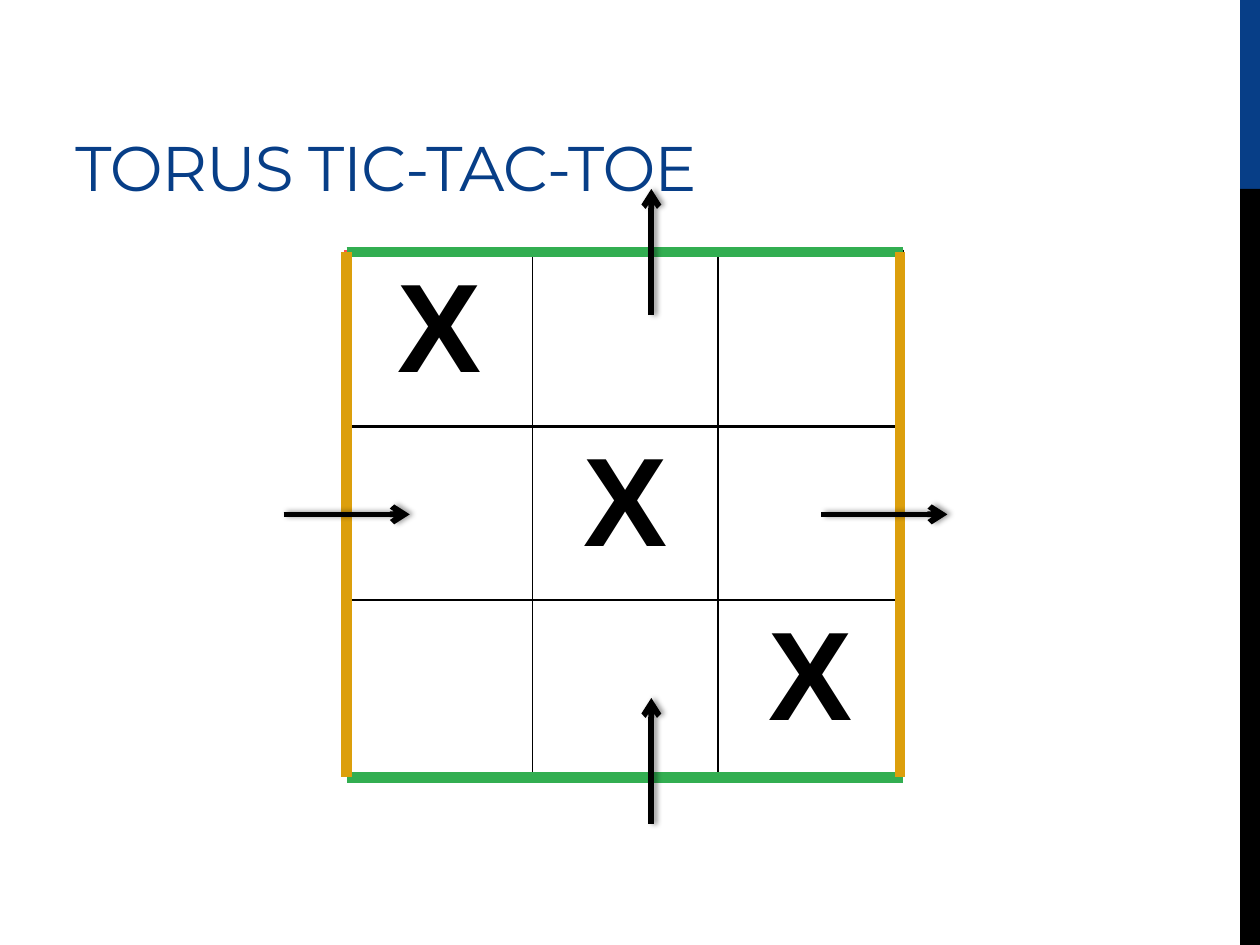
from dataclasses import dataclass

from lxml.etree import SubElement
from pptx import Presentation
from pptx.dml.color import RGBColor
from pptx.enum.shapes import MSO_CONNECTOR, MSO_SHAPE
from pptx.enum.text import MSO_ANCHOR, PP_ALIGN
from pptx.oxml.ns import qn
from pptx.util import Cm, Pt

BLUE, BLACK, WHITE = "073E87", "000000", "FFFFFF"
GREEN, GOLD, RED = "32AE51", "DC9F0C", "FF5050"
LEFT, TOP, RIGHT, BOTTOM = 6.99, 5.08, 18.21, 15.67
GOLD_RIGHT = 18.14
SIZE, COLUMN, ROW = 3, 3.74, 3.51
ARROW = 2.54


@dataclass(frozen=True)
class Band:
    top: float
    height: float
    color: str


@dataclass(frozen=True)
class Border:
    color: str
    width: float


@dataclass(frozen=True)
class Line:
    x1: float
    y1: float
    x2: float
    y2: float
    color: str = BLACK
    width: float = 3.25
    arrow: bool = False


BANDS = [Band(0, 3.81, BLUE), Band(3.81, 15.24, BLACK)]
COLUMN_EDGES = [Border(RED, 3), Border(BLACK, 1), Border(BLACK, 1), Border(BLACK, 1)]
ROW_EDGES = [Border(GREEN, 3), Border(BLACK, 2), Border(BLACK, 1), Border(GREEN, 3)]
EDGES = [Line(LEFT, y, RIGHT, y, GREEN, 6) for y in (TOP, BOTTOM)] + [
    Line(x, TOP, x, BOTTOM, GOLD, 6) for x in (LEFT, GOLD_RIGHT)
]
ARROWS = [Line(13.13, y, 13.13, y - ARROW, arrow=True) for y in (6.35, 16.61)] + [
    Line(x, 10.37, x + ARROW, 10.37, arrow=True) for x in (5.72, 16.56)
]


def rgb(color: str) -> RGBColor:
    return RGBColor.from_string(color)


def add_band(page, band: Band) -> None:
    shape = page.shapes.add_shape(
        MSO_SHAPE.RECTANGLE, Cm(25), Cm(band.top), Cm(0.4), Cm(band.height)
    )
    shape.shadow.inherit = False
    shape.fill.solid()
    shape.fill.fore_color.rgb = rgb(band.color)
    shape.line.fill.background()


def add_title(page, text: str) -> None:
    box = page.shapes.add_textbox(Cm(1.27), Cm(0.43), Cm(16.08), Cm(3.81))
    frame = box.text_frame
    frame.word_wrap = True
    frame.vertical_anchor = MSO_ANCHOR.BOTTOM
    para = frame.paragraphs[0]
    para.text = text
    para.font.name = "Montserrat"
    para.font.size = Pt(36)
    para.font.color.rgb = rgb(BLUE)
    para._p.pPr.find(qn("a:defRPr")).set("spc", "-60")


def set_border(cell, side: str, border: Border) -> None:
    properties = cell._tc.get_or_add_tcPr()
    line = SubElement(properties, qn(f"a:ln{side}"), w=str(Pt(border.width)))
    fill = SubElement(line, qn("a:solidFill"))
    SubElement(fill, qn("a:srgbClr"), val=border.color)


def add_board(page) -> None:
    frame = page.shapes.add_table(
        SIZE, SIZE, Cm(LEFT), Cm(TOP), Cm(SIZE * COLUMN), Cm(SIZE * ROW)
    )
    table = frame.table
    table.first_row = False
    table.horz_banding = False
    for column in table.columns:
        column.width = Cm(COLUMN)
    for r, row in enumerate(table.rows):
        row.height = Cm(ROW)
        for c, cell in enumerate(row.cells):
            set_border(cell, "L", COLUMN_EDGES[c])
            set_border(cell, "R", COLUMN_EDGES[c + 1])
            set_border(cell, "T", ROW_EDGES[r])
            set_border(cell, "B", ROW_EDGES[r + 1])
            cell.fill.solid()
            cell.fill.fore_color.rgb = rgb(WHITE)
            if r == c:
                mark_cell(cell)


def mark_cell(cell) -> None:
    para = cell.text_frame.paragraphs[0]
    para.text = "X"
    para.alignment = PP_ALIGN.CENTER
    para.font.name = "Arial"
    para.font.size = Pt(72)
    para.font.bold = True
    para.font.color.rgb = rgb(BLACK)


def add_line(page, line: Line) -> None:
    connector = page.shapes.add_connector(
        MSO_CONNECTOR.STRAIGHT, Cm(line.x1), Cm(line.y1), Cm(line.x2), Cm(line.y2)
    )
    connector.line.color.rgb = rgb(line.color)
    connector.line.width = Pt(line.width)
    properties = connector._element.spPr
    effects = SubElement(properties, qn("a:effectLst"))
    if line.arrow:
        SubElement(properties.find(qn("a:ln")), qn("a:tailEnd"), type="arrow")
        shadow = SubElement(
            effects, qn("a:outerShdw"), blurRad=str(Pt(3.1)), dist=str(Pt(1.8)), dir="0"
        )
        color = SubElement(shadow, qn("a:srgbClr"), val=BLACK)
        SubElement(color, qn("a:alpha"), val="40000")


def main() -> None:
    deck = Presentation()
    deck.slide_width, deck.slide_height = Cm(25.4), Cm(19.05)
    page = deck.slides.add_slide(deck.slide_layouts[6])
    for band in BANDS:
        add_band(page, band)
    add_board(page)
    add_title(page, "TORUS TIC-TAC-TOE")
    for line in EDGES + ARROWS:
        add_line(page, line)
    deck.save("out.pptx")


if __name__ == "__main__":
    main()
